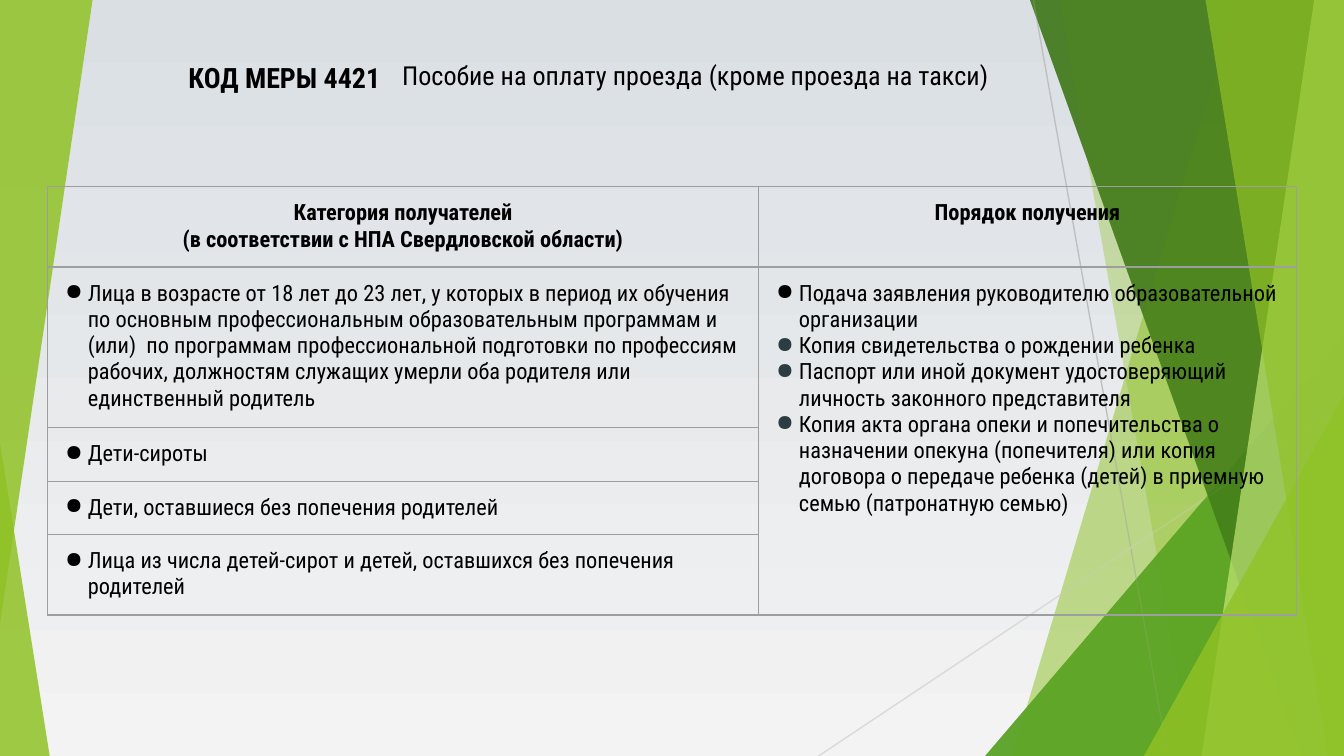
from pptx import Presentation
from pptx import util as u
from pptx.dml.color import RGBColor
from pptx.enum import shapes, text
from pptx.oxml import ns, xmlchemy as xml

WIDTH, HEIGHT = 25.4, 14.29
FACETS = [
    ([(23.39, -0.02), (WIDTH, -0.02), (WIDTH, HEIGHT), (19.13, HEIGHT)], "90C226", 30),
    ([(20.02, -0.02), (WIDTH, -0.02), (WIDTH, HEIGHT), (22.53, HEIGHT)], "90C226", 20),
    ([(18.62, HEIGHT), (WIDTH, 6.35), (WIDTH, HEIGHT)], "54A021", 72),
    ([(19.46, -0.02), (WIDTH, -0.02), (WIDTH, HEIGHT), (24.59, HEIGHT)], "3F7819", 70),
    ([(24.84, -0.02), (WIDTH, -0.02), (WIDTH, HEIGHT), (22.71, HEIGHT)], "C0E474", 70),
    ([(22.78, -0.02), (WIDTH, -0.02), (WIDTH, HEIGHT), (25.1, HEIGHT)], "90C226", 65),
    ([(21.62, HEIGHT), (WIDTH, 7.47), (WIDTH, HEIGHT)], "90C226", 80),
]
HEADERS = [
    ["Категория получателей", "(в соответствии с НПА Свердловской области)"],
    ["Порядок получения"],
]
RECIPIENTS = [
    "Лица в возрасте от 18 лет до 23 лет, у которых в период их обучения по основным "
    "профессиональным образовательным программам и (или)  по программам профессиональной "
    "подготовки по профессиям рабочих, должностям служащих умерли оба родителя или "
    "единственный родитель",
    "Дети-сироты",
    "Дети, оставшиеся без попечения родителей",
    "Лица из числа детей-сирот и детей, оставшихся без попечения родителей",
]
STEPS = [
    "Подача заявления руководителю образовательной организации",
    "Копия свидетельства о рождении ребенка",
    "Паспорт или иной документ удостоверяющий личность законного представителя",
    "Копия акта органа опеки и попечительства о назначении опекуна (попечителя) или копия "
    "договора о передаче ребенка (детей) в приемную семью (патронатную семью)",
]


def colour(value):
    return RGBColor.from_string(value)


def add_node(parent, tag, position=None, **attributes):
    node = xml.OxmlElement(tag)
    for name, value in attributes.items():
        node.set(name, str(value))
    parent.insert(len(parent) if position is None else position, node)
    return node


class Slide:
    """Holds the text style and the current page, and draws each kind of element."""

    font, ink, border = "Roboto Condensed", "000000", "9E9E9E"

    def __init__(self, deck):
        self.page = deck.slides.add_slide(deck.slide_layouts[6])

    def background(self, *colours):
        fill = self.page.background.fill
        fill.gradient()
        fill.gradient_angle = 270
        for stop, value in zip(fill.gradient_stops, colours):
            stop.color.rgb = colour(value)

    def facet(self, points, value, opacity):
        corners = [(u.Cm(x), u.Cm(y)) for x, y in points]
        builder = self.page.shapes.build_freeform(*corners[0])
        builder.add_line_segments(corners[1:], close=True)
        shape = builder.convert_to_shape()
        shape.shadow.inherit = False
        shape.line.fill.background()
        shape.fill.solid()
        shape.fill.fore_color.rgb = colour(value)
        tint = shape.element.spPr.find(ns.qn("a:solidFill"))[0]
        add_node(tint, "a:alpha", val=opacity * 1000)

    def line(self, x1, y1, x2, y2, value):
        ends = [u.Cm(length) for length in (x1, y1, x2, y2)]
        line = self.page.shapes.add_connector(shapes.MSO_CONNECTOR.STRAIGHT, *ends)
        line.line.color.rgb = colour(value)
        line.line.width = u.Pt(0.75)
        add_node(line.element.spPr, "a:effectLst")

    def add_span(self, para, words, size, bold=False):
        span = para.add_run()
        span.text = words
        span.font.name = self.font
        span.font.size = u.Pt(size)
        span.font.bold = bold
        span.font.color.rgb = colour(self.ink)

    def label(self, left, width, words, size, bold=False, align=text.PP_ALIGN.LEFT,
              margins=(0.18, 0.1), spacing=None):
        box = self.page.shapes.add_textbox(u.Cm(left), u.Cm(0.48), u.Cm(width), u.Cm(1.96))
        frame = box.text_frame
        frame.word_wrap = True
        frame.vertical_anchor = text.MSO_ANCHOR.MIDDLE
        frame.margin_left = frame.margin_right = u.Cm(margins[0])
        frame.margin_top = frame.margin_bottom = u.Cm(margins[1])
        para = frame.paragraphs[0]
        para.alignment = align
        para.line_spacing = spacing
        self.add_span(para, words, size, bold)

    def table(self, left, top, columns, rows):
        table = self.page.shapes.add_table(
            len(rows), len(columns), u.Cm(left), u.Cm(top),
            u.Cm(sum(columns)), u.Cm(sum(rows))).table
        table.first_row = table.horz_banding = False
        for column, width in zip(table.columns, columns):
            column.width = u.Cm(width)
        for row, height in zip(table.rows, rows):
            row.height = u.Cm(height)
        for cell in table.iter_cells():
            self.outline(cell)
        return table

    def outline(self, cell):
        cell.margin_left = cell.margin_right = cell.margin_top = cell.margin_bottom = u.Cm(0.25)
        cell.fill.background()
        properties = cell.fill._xPr
        for position, side in enumerate("LRTB"):
            edge = add_node(properties, f"a:ln{side}", position, w=u.Pt(0.75))
            add_node(add_node(edge, "a:solidFill"), "a:srgbClr", val=self.border)

    def fill_cell(self, cell, lines, bullets=None):
        frame = cell.text_frame
        for index, words in enumerate(lines):
            para = frame.add_paragraph() if index else frame.paragraphs[0]
            if bullets:
                self.bullet(para, bullets[index])
            else:
                para.alignment = text.PP_ALIGN.CENTER
            self.add_span(para, words, 12, bold=not bullets)

    def bullet(self, para, value):
        properties = para._p.get_or_add_pPr()
        properties.set("marL", str(u.Cm(0.51)))
        properties.set("indent", str(u.Cm(-0.43)))
        add_node(add_node(properties, "a:buClr"), "a:srgbClr", val=value)
        add_node(properties, "a:buChar", char="●")


def main():
    deck = Presentation()
    deck.slide_width, deck.slide_height = u.Cm(WIDTH), u.Cm(HEIGHT)
    slide = Slide(deck)
    slide.background("DADFE4", "F3F3F3")

    for facet in FACETS:
        slide.facet(*facet)
    slide.facet([(0, HEIGHT), (0, 8.36), (0.94, HEIGHT)], "90C226", 85)
    slide.line(19.53, 0, 22.07, HEIGHT, "BFBFBF")
    slide.line(WIDTH, 7.67, 15.47, HEIGHT, "D9D9D9")
    for facet in FACETS:
        slide.facet(*facet)
    slide.facet([(0, 0), (1.75, 0), (0, 11.81)], "90C226", 85)

    slide.label(7.42, 16, "Пособие на оплату проезда (кроме проезда на такси)", 14, spacing=0.9)
    slide.label(2.08, 5.36, "КОД МЕРЫ 4421", 15, bold=True,
                align=text.PP_ALIGN.RIGHT, margins=(0.25, 0.25))

    table = slide.table(0.9, 3.53, [13.44, 10.16], [1.5, 2.99, 1, 1, 1.5])
    table.cell(1, 1).merge(table.cell(4, 1))
    for column, lines in enumerate(HEADERS):
        slide.fill_cell(table.cell(0, column), lines)
    for row, words in enumerate(RECIPIENTS, 1):
        slide.fill_cell(table.cell(row, 0), [words], ["000000"])
    slide.fill_cell(table.cell(1, 1), STEPS, ["000000"] + ["2C3C43"] * 3)

    deck.save("out.pptx")


if __name__ == "__main__":
    main()
